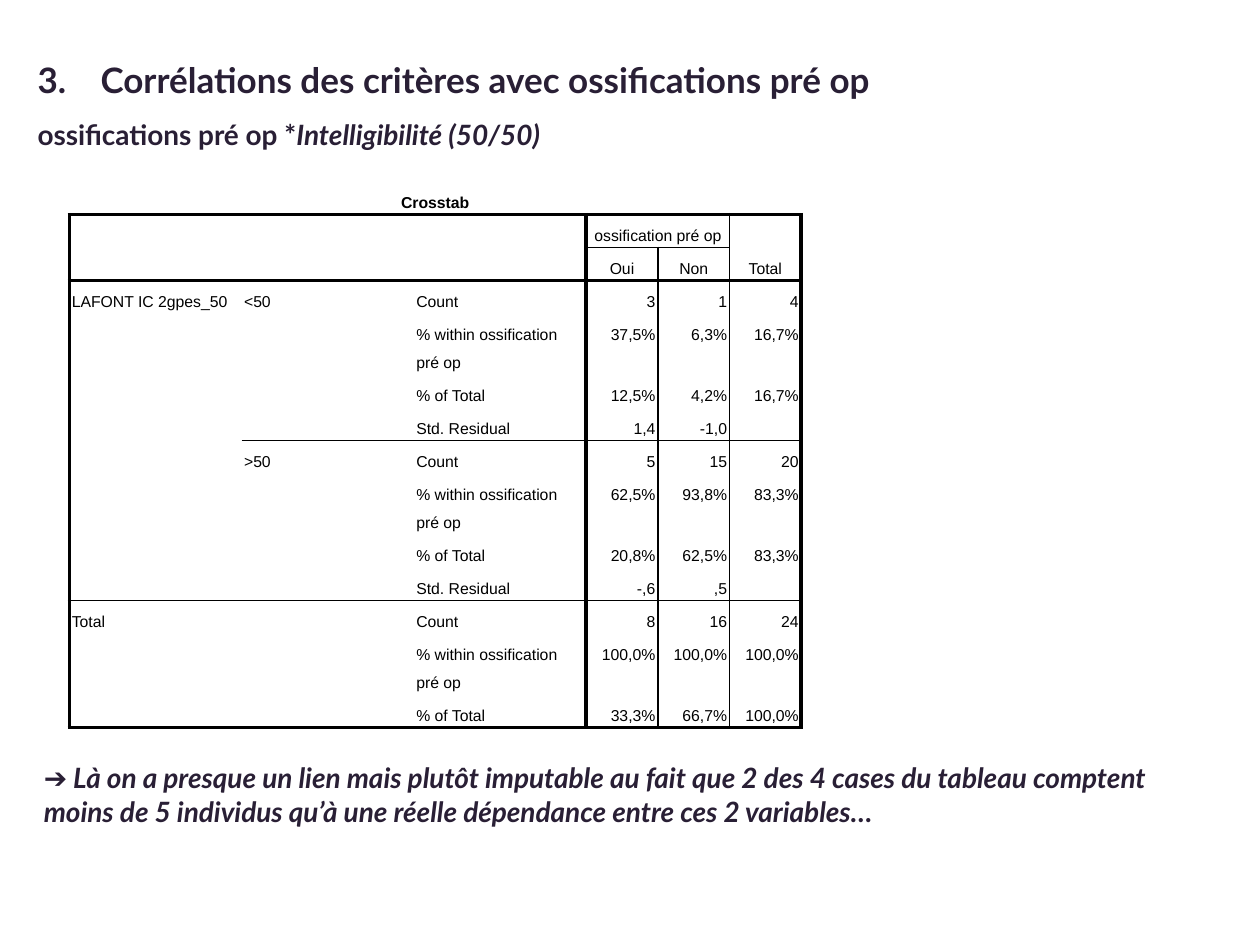
from lxml import etree
from pptx import Presentation
from pptx.dml.color import RGBColor
from pptx.enum.text import MSO_ANCHOR, PP_ALIGN
from pptx.oxml.ns import qn
from pptx.util import Inches, Pt

LEFT, CENTER, RIGHT = PP_ALIGN.LEFT, PP_ALIGN.CENTER, PP_ALIGN.RIGHT
TOP, MIDDLE, BOTTOM = MSO_ANCHOR.TOP, MSO_ANCHOR.MIDDLE, MSO_ANCHOR.BOTTOM
WIDTH, HEIGHT = Inches(10), Inches(7.5)
GRID_COLUMNS, GRID_ROWS = 100, 75
INK, BLACK, WHITE = "291F35", "000000", "FFFFFF"
THICK, THIN = 2.25, 1
TABLE_SIZE = 9

COLUMN_SHARES = [1.37, 1.37, 1.37, 0.57, 0.57, 0.57]
LINE_ROW, WRAPPED_ROW = 0.26, 0.48
WITHIN = "% within ossification pré op"
ROWS = [
    ["Crosstab", "", "", "", "", ""],
    ["", "", "", "ossification pré op", "", "Total"],
    ["", "", "", "Oui", "Non", ""],
    ["LAFONT IC 2gpes_50", "<50", "Count", "3", "1", "4"],
    ["", "", WITHIN, "37,5%", "6,3%", "16,7%"],
    ["", "", "% of Total", "12,5%", "4,2%", "16,7%"],
    ["", "", "Std. Residual", "1,4", "-1,0", ""],
    ["", ">50", "Count", "5", "15", "20"],
    ["", "", WITHIN, "62,5%", "93,8%", "83,3%"],
    ["", "", "% of Total", "20,8%", "62,5%", "83,3%"],
    ["", "", "Std. Residual", "-,6", ",5", ""],
    ["Total", "", "Count", "8", "16", "24"],
    ["", "", WITHIN, "100,0%", "100,0%", "100,0%"],
    ["", "", "% of Total", "33,3%", "66,7%", "100,0%"],
]
MERGES = [(0, 0, 0, 5), (1, 3, 1, 4), (1, 5, 2, 5), (3, 0, 10, 0),
          (3, 1, 6, 1), (7, 1, 10, 1), (11, 0, 13, 1)]
VERTICAL_RULES = {0: THICK, 3: THICK, 4: THIN, 5: THIN, 6: THICK}
HORIZONTAL_RULES = {1: (THICK, range(6)), 2: (THIN, range(3, 5)),
                    3: (THICK, range(6)), 7: (THIN, range(1, 6)),
                    11: (THIN, range(6)), 14: (THICK, range(6))}


def color(hex_code):
    """Return the colour for a hex string."""
    return RGBColor.from_string(hex_code)


def place(left, top, width, height):
    """Turn columns and rows of the slide grid into a box of lengths."""
    column, row = WIDTH / GRID_COLUMNS, HEIGHT / GRID_ROWS
    return (int(column * left), int(row * top),
            int(column * width), int(row * height))


def style(run, size, font, hex_code, bold=False, italic=False):
    """Format one run."""
    run.font.size, run.font.name = Pt(size), font
    run.font.bold, run.font.italic = bold, italic
    run.font.color.rgb = color(hex_code)


def add_heading(slide, box):
    """Add the numbered title and its subtitle."""
    frame = slide.shapes.add_textbox(*box).text_frame
    frame.word_wrap = True
    lines = [
        (20, [("3.\tCorrélations des critères avec ossifications pré op", False)]),
        (16, [("ossifications pré op *", False), ("Intelligibilité (50/50)", True)]),
    ]
    for index, (size, parts) in enumerate(lines):
        line = frame.add_paragraph() if index else frame.paragraphs[0]
        line.line_spacing = 1.5
        indent = line._p.get_or_add_pPr()
        indent.set("marL", str(Inches(0.5)))
        indent.set("indent", str(-Inches(0.5)))
        for wording, italic in parts:
            run = line.add_run()
            run.text = wording
            style(run, size, "Lato", INK, True, italic)


def horizontal_rule(edge, column):
    """Return the width of the rule above a row, or None."""
    width, columns = HORIZONTAL_RULES.get(edge, (None, ()))
    return width if column in columns else None


def rule_cell(cell, row, column):
    """Draw the four borders of a cell from the rules of the grid."""
    bottom = row + (cell.span_height if cell.is_merge_origin else 1)
    right = column + (cell.span_width if cell.is_merge_origin else 1)
    borders = [
        ("a:lnL", VERTICAL_RULES.get(column) if row else None),
        ("a:lnR", VERTICAL_RULES.get(right) if row else None),
        ("a:lnT", horizontal_rule(row, column)),
        ("a:lnB", horizontal_rule(bottom, column)),
    ]
    properties = cell._tc.get_or_add_tcPr()
    for index, (tag, width) in enumerate(borders):
        border = etree.Element(qn(tag))
        if width:
            border.set("w", str(Pt(width)))
            ink = etree.SubElement(border, qn("a:solidFill"))
            etree.SubElement(ink, qn("a:srgbClr")).set("val", BLACK)
        else:
            etree.SubElement(border, qn("a:noFill"))
        properties.insert(index, border)


def fill_cell(cell, wording, row, column):
    """Write and format one cell."""
    cell.fill.solid()
    cell.fill.fore_color.rgb = color(WHITE)
    cell.margin_left = cell.margin_right = Inches(0.02)
    cell.margin_top = cell.margin_bottom = Inches(0.02)
    cell.vertical_anchor = MIDDLE if row == 0 else BOTTOM if row < 3 else TOP
    cell.text_frame.text = wording
    line = cell.text_frame.paragraphs[0]
    line.line_spacing = Pt(16)
    line.alignment = CENTER if row < 3 else RIGHT if column > 2 else LEFT
    for run in line.runs:
        style(run, TABLE_SIZE, "Arial", BLACK, bold=row == 0)
    if not wording:
        ending = etree.SubElement(line._p, qn("a:endParaRPr"))
        ending.set("sz", str(TABLE_SIZE * 100))


def add_crosstab(slide, box):
    """Add the cross table."""
    table = slide.shapes.add_table(len(ROWS), len(COLUMN_SHARES), *box).table
    table.first_row = table.horz_banding = False
    for column, share in zip(table.columns, COLUMN_SHARES):
        column.width = int(box[2] * share / sum(COLUMN_SHARES))
    for row, values in zip(table.rows, ROWS):
        row.height = Inches(WRAPPED_ROW if WITHIN in values else LINE_ROW)
    for top, left, bottom, right in MERGES:
        table.cell(top, left).merge(table.cell(bottom, right))
    for row, values in enumerate(ROWS):
        for column, wording in enumerate(values):
            cell = table.cell(row, column)
            fill_cell(cell, wording, row, column)
            rule_cell(cell, row, column)


def add_conclusion(slide, box):
    """Add the closing remark."""
    frame = slide.shapes.add_textbox(*box).text_frame
    frame.word_wrap = True
    frame.text = ("➔ Là on a presque un lien mais plutôt imputable au fait que "
                  "2 des 4 cases du tableau comptent moins de 5 individus "
                  "qu’à une réelle dépendance entre ces 2 variables…")
    style(frame.paragraphs[0].runs[0], 16, "Lato", INK, True, True)


def main():
    """Build the slide and save it."""
    deck = Presentation()
    deck.slide_width, deck.slide_height = WIDTH, HEIGHT
    slide = deck.slides.add_slide(deck.slide_layouts[6])
    add_heading(slide, place(2, 2.5, 86.3, 15.1))
    add_crosstab(slide, place(5.5, 14.4, 58.1, 43.9))
    add_conclusion(slide, place(2.5, 59.9, 91.3, 9.1))
    deck.save("out.pptx")


if __name__ == "__main__":
    main()
